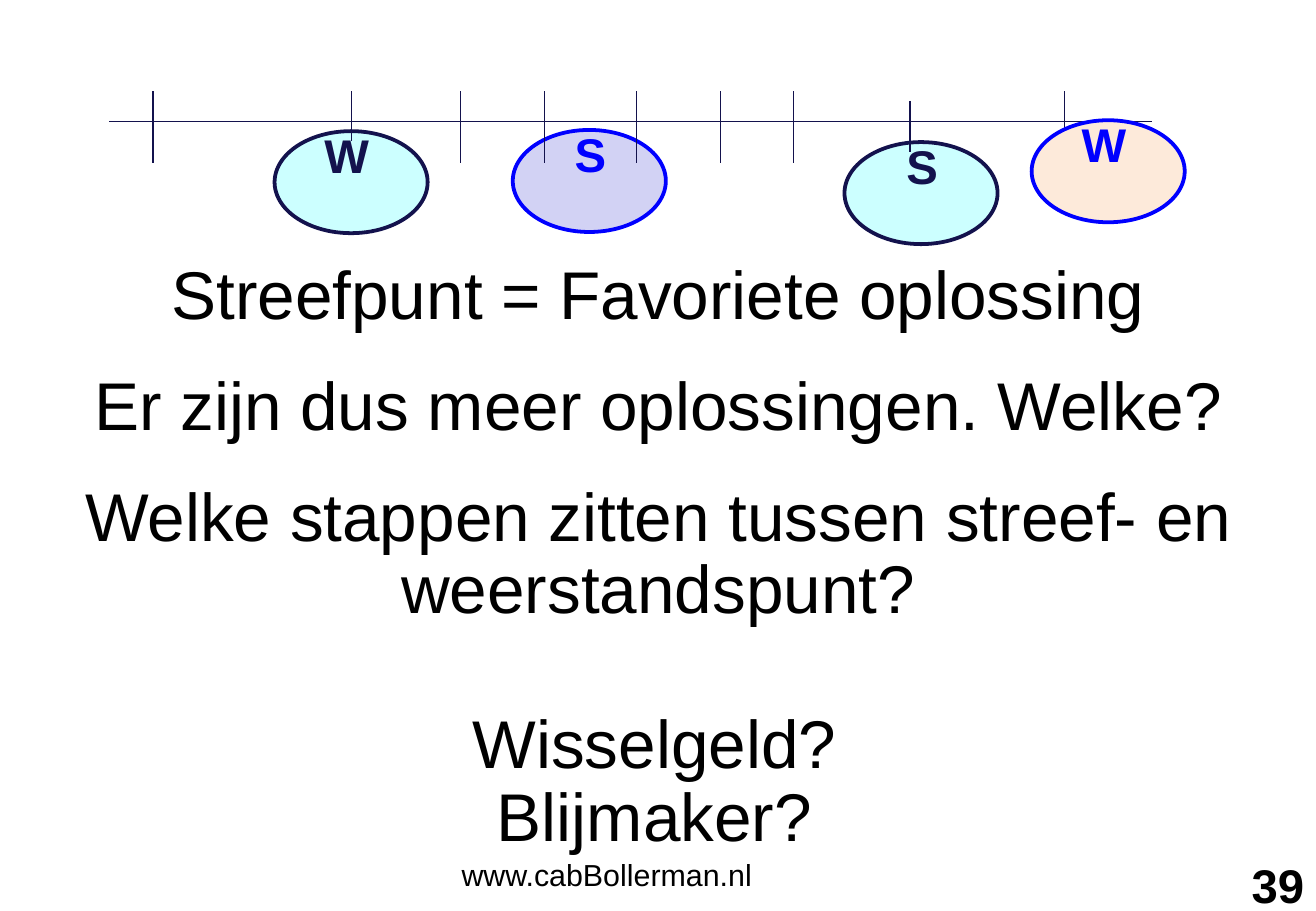
import pptx
import pptx.util
import pptx.dml.color
import pptx.enum.shapes
import pptx.enum.text
import pptx.oxml

Inches, Pt = pptx.util.Inches, pptx.util.Pt
RGBColor = pptx.dml.color.RGBColor
Align = pptx.enum.text.PP_ALIGN

WIDTH, HEIGHT = 10.83, 7.5
NAVY = RGBColor(0x13, 0x12, 0x4D)
BLUE = RGBColor(0x00, 0x00, 0xFF)
BLACK = RGBColor(0x00, 0x00, 0x00)
CYAN = RGBColor(0xCC, 0xFF, 0xFF)
LILAC = RGBColor(0xD2, 0xD2, 0xF4)
PEACH = RGBColor(0xFD, 0xEA, 0xDA)


def write(frame, text, size=40, color=BLACK, bold=False, align=Align.CENTER,
          spacing=None, gap=0):
    """Fill a frame, one paragraph per line of text; \\v breaks a line."""
    frame.word_wrap = True
    frame.vertical_anchor = pptx.enum.text.MSO_ANCHOR.TOP
    for index, line in enumerate(text.split("\n")):
        para = frame.add_paragraph() if index else frame.paragraphs[0]
        para.text = line
        para.alignment = align
        para.line_spacing = spacing
        para.space_before = Pt(gap if index else 0)
        for span in para.runs:
            span.font.name = "Arial"
            span.font.size = Pt(size)
            span.font.bold = bold
            span.font.color.rgb = color


def add_text(page, box, text, **style):
    shape = page.shapes.add_textbox(*map(Inches, box))
    write(shape.text_frame, text, **style)


def add_line(page, start, end):
    line = page.shapes.add_connector(
        pptx.enum.shapes.MSO_CONNECTOR.STRAIGHT, *map(Inches, start + end))
    line.line.color.rgb = NAVY
    line.line.width = Pt(0.75)
    line._element.spPr.append(pptx.oxml.parse_xml(
        '<a:effectLst xmlns:a="http://schemas.openxmlformats.org/drawingml/2006/main"/>'))


def add_point(page, left, top, letter, fill, color):
    point = page.shapes.add_shape(pptx.enum.shapes.MSO_SHAPE.OVAL,
                                  *map(Inches, (left, top, 1.26, 0.84)))
    point.shadow.inherit = False
    point.fill.solid()
    point.fill.fore_color.rgb = fill
    point.line.color.rgb = color
    point.line.width = Pt(2.25)
    frame = point.text_frame
    frame.margin_left = Inches(0.1)
    frame.margin_right = Inches(0.17 if letter == "W" else 0.08)
    write(frame, letter, size=28, color=color, bold=True, spacing=0.48)


def add_scale(page, left, axis, width):
    """Draw the negotiation line with its steps and its four points."""
    add_point(page, left + 3.32, axis + 0.07, "S", LILAC, BLUE)
    add_point(page, left + 1.36, axis + 0.08, "W", CYAN, NAVY)
    add_point(page, left + 6.05, axis + 0.17, "S", CYAN, NAVY)
    add_line(page, (left, axis), (left + width, axis))
    long_steps = [0.36, 2.89, 3.58, 4.34, 5.03, 5.63, 7.86]
    steps = [(step, -0.25, 0.34) for step in long_steps]
    steps += [(1.99, -0.25, 0.16), (6.59, -0.17, 0.25)]
    for step, above, below in steps:
        add_line(page, (left + step, axis + above), (left + step, axis + below))
    add_point(page, left + 7.59, axis - 0.01, "W", PEACH, BLUE)


def add_questions(page, top):
    add_text(page, (0, top, WIDTH, 3.17),
             "Streefpunt = Favoriete oplossing\n"
             "Er zijn dus meer oplossingen. Welke?\n"
             "Welke stappen zitten tussen streef- en weerstandspunt?",
             spacing=0.9, gap=22.5)
    add_text(page, (-0.03, top + 3.7, WIDTH, 1.33),
             "Wisselgeld?\vBlijmaker?", spacing=0.9)


def add_footer(page, top):
    add_text(page, (3.7, top, 3.43, 0.5), "www.cabBollerman.nl",
             size=18, align=Align.LEFT)
    add_text(page, (WIDTH - 2.25, top, 2.25, 0.5), "39",
             size=28, bold=True, align=Align.RIGHT)


def main():
    deck = pptx.Presentation()
    deck.slide_width, deck.slide_height = Inches(WIDTH), Inches(HEIGHT)
    page = deck.slides.add_slide(deck.slide_layouts[6])
    add_footer(page, HEIGHT - 0.5)
    add_scale(page, 0.9, 1, 8.58)
    add_questions(page, 2.1)
    deck.save("out.pptx")


if __name__ == "__main__":
    main()
